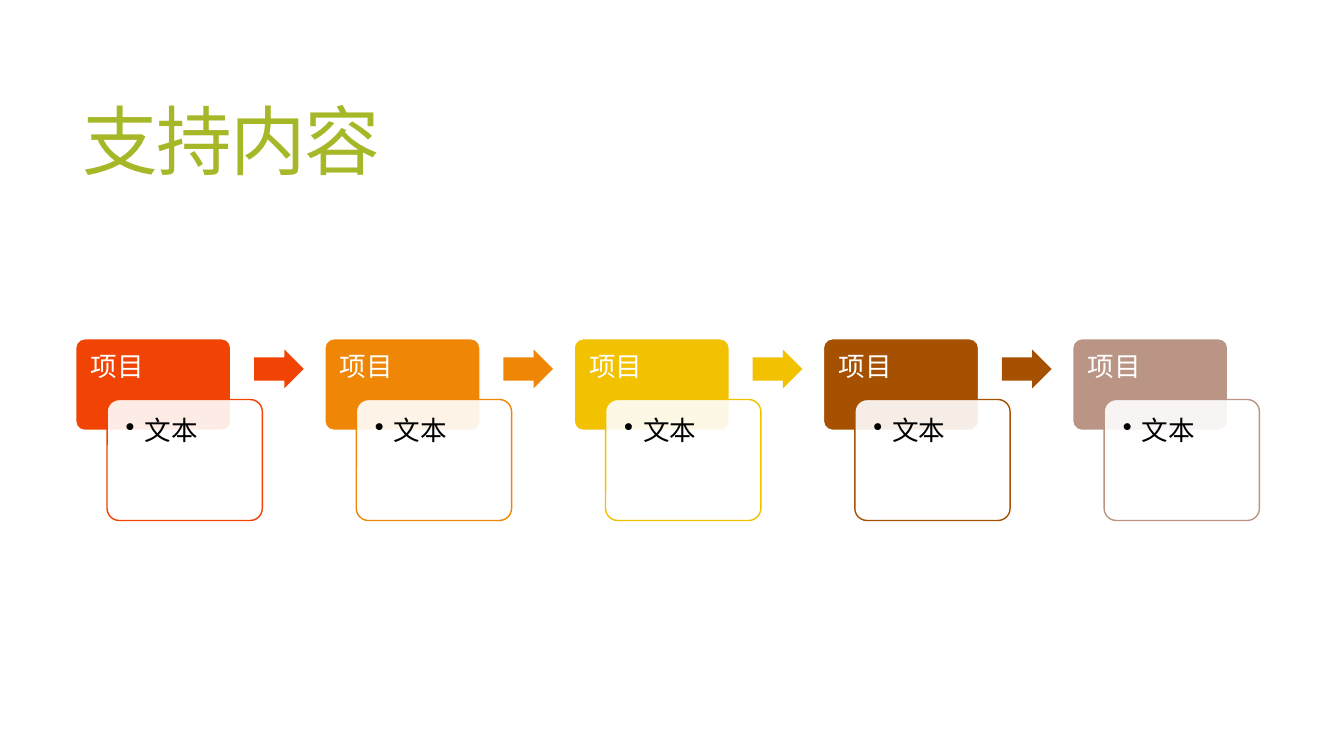
"""Build a slide with five linked project stages."""
from lxml.etree import SubElement
from pptx import Presentation
from pptx.dml.color import RGBColor
from pptx.enum.shapes import MSO_SHAPE as Shape
from pptx.enum.text import MSO_ANCHOR as Anchor, MSO_AUTO_SIZE as AutoSize, PP_ALIGN as Align
from pptx.oxml.ns import qn
from pptx.util import Pt

WHITE = RGBColor(0xFF, 0xFF, 0xFF)
BLACK = RGBColor(0x00, 0x00, 0x00)
GREEN = RGBColor(0xA6, 0xB7, 0x27)
RED = RGBColor(0xF0, 0x43, 0x04)
ORANGE = RGBColor(0xEF, 0x86, 0x06)
YELLOW = RGBColor(0xF2, 0xC1, 0x00)
BROWN = RGBColor(0xA6, 0x50, 0x01)
ROSE = RGBColor(0xBA, 0x95, 0x85)
STAGE_COLORS = (RED, ORANGE, YELLOW, BROWN, ROSE)
STAGE_LEFT, STAGE_STEP = 54, 178.05


class StagePage:
    font_name = "Noto Sans CJK SC"
    text_size = 19
    inset = 10.8

    def __init__(self, deck):
        self.page = deck.slides.add_slide(deck.slide_layouts[5])

    def add_span(self, para, text, size, color):
        span = para.add_run()
        span.text = text
        span.font.size = Pt(size)
        span.font.name = self.font_name
        span.font.color.rgb = color
        properties = span.font._element
        SubElement(properties, qn("a:ea"), typeface=self.font_name)
        return properties

    def add_title(self, text, left, top, width, height):
        title = self.page.shapes.title
        title.left, title.top, title.width, title.height = map(Pt, (left, top, width, height))
        frame = title.text_frame
        frame.auto_size = AutoSize.NONE
        frame.vertical_anchor = Anchor.MIDDLE
        para = frame.paragraphs[0]
        para.alignment = Align.LEFT
        para.line_spacing = 0.85
        self.add_span(para, text, 54, GREEN).set("spc", "-120")

    def add_block(self, kind, left, top, width, height, fill, line=None, adjustments=(0.1,), alpha=None):
        block = self.page.shapes.add_shape(kind, *map(Pt, (left, top, width, height)))
        block.shadow.inherit = False
        for index, value in enumerate(adjustments):
            block.adjustments[index] = value
        block.fill.solid()
        block.fill.fore_color.rgb = fill
        if alpha is not None:
            color = block.fill._xPr.find(qn("a:solidFill"))[0]
            SubElement(color, qn("a:alpha"), val=str(alpha * 1000))
        if line is None:
            block.line.fill.background()
        else:
            block.line.color.rgb = line
            block.line.width = Pt(1)

    def add_text(self, text, left, top, width, height, color, space_after, bottom, bullet=False):
        box = self.page.shapes.add_textbox(*map(Pt, (left, top, width, height)))
        frame = box.text_frame
        frame.word_wrap = True
        frame.vertical_anchor = Anchor.TOP
        frame.margin_left = frame.margin_top = frame.margin_right = Pt(self.inset)
        frame.margin_bottom = Pt(bottom)
        para = frame.paragraphs[0]
        if bullet:
            para.level = 1
            properties = para._p.get_or_add_pPr()
            properties.set("marL", str(Pt(13.5)))
            properties.set("indent", str(-Pt(13.5)))
            SubElement(properties, qn("a:buChar"), char="•")
        para.alignment = Align.LEFT
        para.line_spacing = 0.9
        para.space_after = Pt(space_after)
        self.add_span(para, text, self.text_size, color)

    def add_stage(self, left, color, has_arrow):
        self.add_block(Shape.ROUNDED_RECTANGLE, left, 241.9, 110.9, 65.5, color, WHITE)
        self.add_text("项目", left, 241.9, 110.9, 43.7, WHITE, 6.65, 5.4)
        self.add_block(Shape.ROUNDED_RECTANGLE, left + 22.5, 285.4, 110.9, 86.4, WHITE, color, alpha=90)
        self.add_text("文本", left + 25, 288, 105.8, 81.4, BLACK, 2.85, self.inset, bullet=True)
        if has_arrow:
            self.add_block(Shape.RIGHT_ARROW, left + 127.5, 249.8, 35.5, 27.6, color, adjustments=(0.6, 0.5))


def main():
    deck = Presentation()
    deck.slide_width, deck.slide_height = Pt(960), Pt(540)
    page = StagePage(deck)
    page.add_title("支持内容", 51.8, 39.6, 848.2, 130.3)
    for index, color in enumerate(STAGE_COLORS):
        has_arrow = index < len(STAGE_COLORS) - 1
        page.add_stage(STAGE_LEFT + index * STAGE_STEP, color, has_arrow)
    deck.save("out.pptx")


if __name__ == "__main__":
    main()
